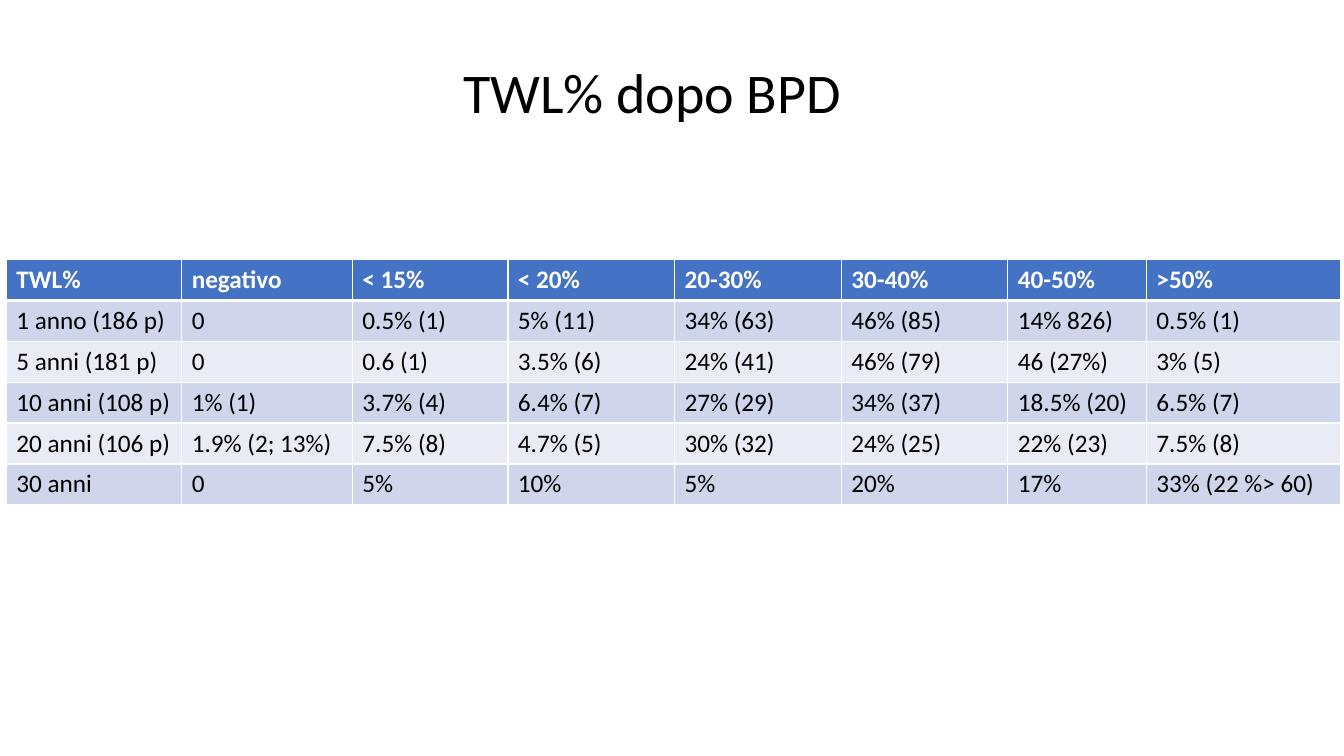
import pptx
import pptx.dml.color
import pptx.enum.text
import pptx.oxml
import pptx.oxml.ns
import pptx.util
from pptx.dml.color import RGBColor
from pptx.util import Cm

FONT = "Calibri"
BLACK = RGBColor(0x00, 0x00, 0x00)
WHITE = RGBColor(0xFF, 0xFF, 0xFF)
HEADER_BLUE = RGBColor(0x44, 0x72, 0xC4)
BAND_DARK = RGBColor(0xCF, 0xD5, 0xEA)
BAND_LIGHT = RGBColor(0xE9, 0xEB, 0xF5)

COLUMN_WIDTHS = [4.42, 4.3, 3.92, 4.2, 4.2, 4.2, 3.49, 4.9]
ROW_HEIGHT = 1.03
ROWS = [
    ["TWL%", "negativo", "< 15%", "< 20%", "20-30%", "30-40%", "40-50%", ">50%"],
    ["1 anno (186 p)", "0", "0.5% (1)", "5% (11)", "34% (63)", "46% (85)", "14% 826)", "0.5% (1)"],
    ["5 anni (181 p)", "0", "0.6 (1)", "3.5% (6)", "24% (41)", "46% (79)", "46 (27%)", "3% (5)"],
    ["10 anni (108 p)", "1% (1)", "3.7% (4)", "6.4% (7)", "27% (29)", "34% (37)", "18.5% (20)", "6.5% (7)"],
    ["20 anni (106 p)", "1.9% (2; 13%)", "7.5% (8)", "4.7% (5)", "30% (32)", "24% (25)", "22% (23)", "7.5% (8)"],
    ["30 anni", "0", "5%", "10%", "5%", "20%", "17%", "33% (22 %> 60)"],
]


def set_text(p, text, size, color, bold=False):
    p.text = text
    p.font.name = FONT
    p.font.size = pptx.util.Pt(size)
    p.font.color.rgb = color
    p.font.bold = bold


def add_title(s, text):
    sp = s.shapes.add_textbox(Cm(11.43), Cm(1.32), Cm(10.13), Cm(1.96))
    tf = sp.text_frame
    tf.word_wrap = False
    tf.auto_size = pptx.enum.text.MSO_AUTO_SIZE.SHAPE_TO_FIT_TEXT
    set_text(tf.paragraphs[0], text, 40, BLACK)


def set_borders(cell, top, bottom):
    """Draw white cell edges; widths are in points."""
    tc_pr = cell._tc.get_or_add_tcPr()
    for side, width in (("L", 1), ("R", 1), ("T", top), ("B", bottom)):
        tc_pr.append(pptx.oxml.parse_xml(
            f'<a:ln{side} {pptx.oxml.ns.nsdecls("a")} w="{pptx.util.Pt(width)}">'
            f'<a:solidFill><a:srgbClr val="{WHITE}"/></a:solidFill></a:ln{side}>'))


def style_cell(cell, text, row):
    header = row == 0
    # The rule under the header is thicker than the others
    set_borders(cell, top=3 if row == 1 else 1, bottom=3 if header else 1)
    cell.fill.solid()
    band = BAND_DARK if row % 2 else BAND_LIGHT
    cell.fill.fore_color.rgb = HEADER_BLUE if header else band
    set_text(cell.text_frame.paragraphs[0], text, 18, WHITE if header else BLACK, header)


def add_weight_loss_table(s):
    frame = s.shapes.add_table(len(ROWS), len(COLUMN_WIDTHS), Cm(0.16), Cm(6.54),
                               Cm(sum(COLUMN_WIDTHS)), Cm(ROW_HEIGHT * len(ROWS)))
    table = frame.table
    for column, width in zip(table.columns, COLUMN_WIDTHS):
        column.width = Cm(width)
    for i, values in enumerate(ROWS):
        table.rows[i].height = Cm(ROW_HEIGHT)
        for j, text in enumerate(values):
            style_cell(table.cell(i, j), text, i)


def main():
    prs = pptx.Presentation()
    prs.slide_width, prs.slide_height = Cm(33.87), Cm(19.05)
    s = prs.slides.add_slide(prs.slide_layouts[6])

    # Title
    add_title(s, "TWL% dopo BPD")

    # Weight loss by years after surgery
    add_weight_loss_table(s)

    prs.save("out.pptx")


if __name__ == "__main__":
    main()
